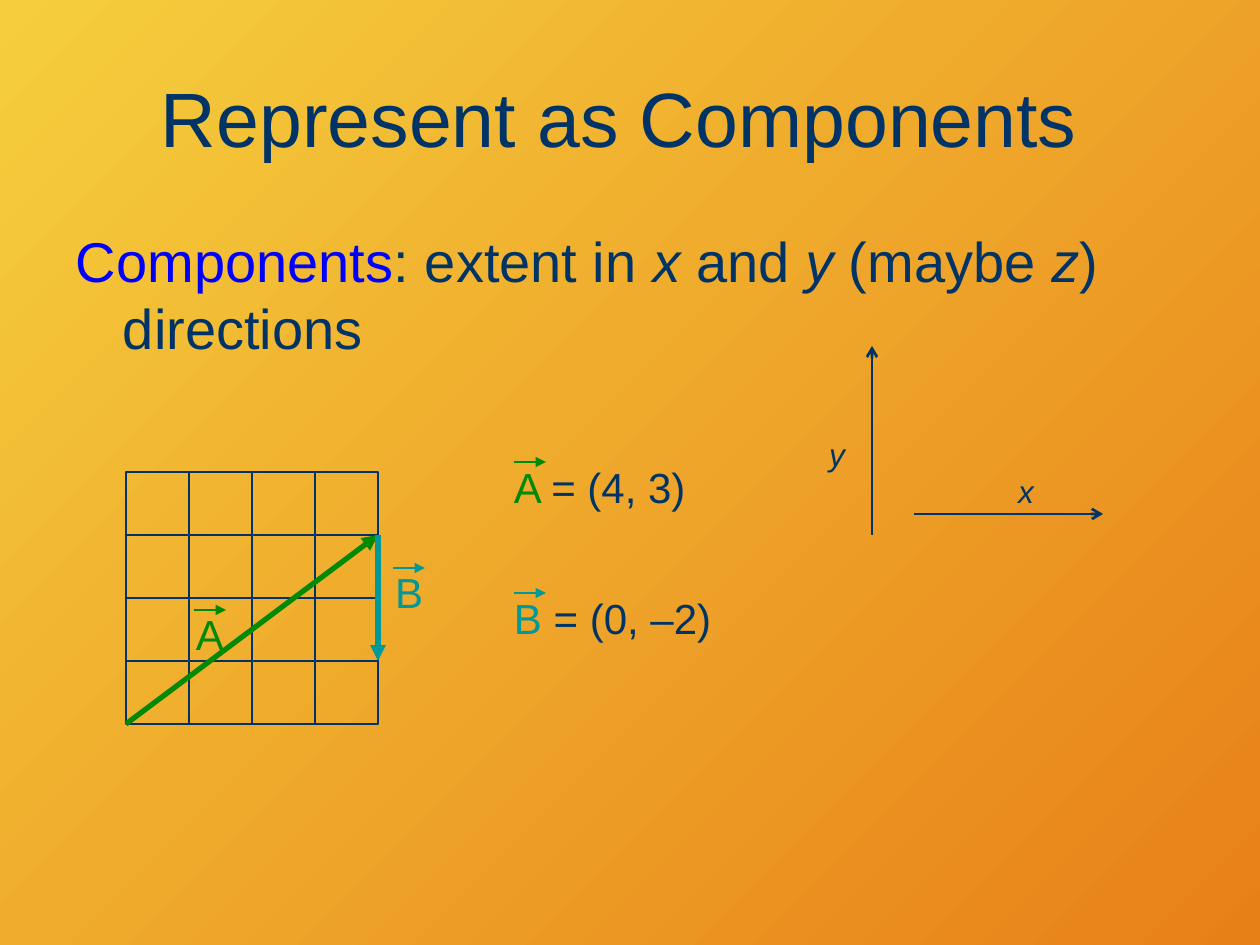
from lxml.etree import SubElement
from pptx import Presentation
from pptx.dml.color import RGBColor
from pptx.enum.shapes import MSO_CONNECTOR as Link, MSO_SHAPE as Shape
from pptx.enum.text import MSO_ANCHOR as Anchor, PP_ALIGN as Align
from pptx.oxml.ns import qn
from pptx.util import Emu, Pt

SCALE = 914400 / 126
HUE = {"navy": "003366", "blue": "0000FF", "green": "008901",
       "teal": "009999", "gold": "F5CE3D", "rust": "E88018"}

TITLE = [("Represent as Components ", "navy", False)]
BODY = [
    ("Components", "blue", False), (": extent in ", "navy", False),
    ("x", "navy", True), (" and ", "navy", False), ("y ", "navy", True),
    ("(maybe", "navy", False), (" z", "navy", True),
    (") directions", "navy", False),
]
GRID = {"left": 126, "top": 472, "cell": 63, "count": 4}
PATHS = [((0, 4), (4, 1), "green"), ((4, 1), (4, 3), "teal")]
TAGS = [("B", "teal", 388, 567), ("A", "green", 189, 609)]
SUMS = [("A ", "= (4, 3)", "green", 462), ("B ", "= (0, –2)", "teal", 593)]
AXES = [
    ("x", (1018, 472), (914, 514), (1103, 514)),
    ("y", (829, 435), (872, 535), (872, 346)),
]


def px(num):
    return Emu(round(num * SCALE))


def tint(name):
    return RGBColor.from_string(HUE[name])


def write(runs, box, size, align=Align.LEFT, anchor=Anchor.TOP, pad=(0, 0), hang=0):
    frame = slide.shapes.add_textbox(*map(px, box)).text_frame
    frame.word_wrap = True
    frame.vertical_anchor = anchor
    frame.margin_left = frame.margin_right = px(pad[0])
    frame.margin_top = frame.margin_bottom = px(pad[1])
    para = frame.paragraphs[0]
    para.alignment = align
    if hang:
        props = para._p.get_or_add_pPr()
        props.set("marL", str(px(hang)))
        props.set("indent", str(px(-hang)))
    for text, hue, slant in runs:
        run = para.add_run()
        run.text = text
        run.font.name = "Arial"
        run.font.size = Pt(size)
        run.font.italic = slant
        run.font.color.rgb = tint(hue)


def arrow(start, end, hue, width, head="triangle"):
    link = slide.shapes.add_connector(Link.STRAIGHT, *map(px, (*start, *end)))
    link.line.color.rgb = tint(hue)
    link.line.width = Pt(width)
    SubElement(link.line._get_or_add_ln(), qn("a:tailEnd"), type=head)
    SubElement(link._element.spPr, qn("a:effectLst"))


def node(col, row):
    return GRID["left"] + col * GRID["cell"], GRID["top"] + row * GRID["cell"]


deck = Presentation()
deck.slide_width, deck.slide_height = px(1260), px(945)
slide = deck.slides.add_slide(deck.slide_layouts[6])

fill = slide.background.fill
fill.gradient()
fill.gradient_angle = 315
for stop, hue, spot in zip(fill.gradient_stops, ("gold", "rust"), (0, 1)):
    stop.color.rgb = tint(hue)
    stop.position = spot

write(TITLE, (63, 38, 1134, 157), 44, Align.CENTER, Anchor.MIDDLE, (13, 6))
write(BODY, (63, 220, 1134, 158), 32, pad=(13, 6), hang=47)

for row in range(GRID["count"]):
    for col in range(GRID["count"]):
        cell = slide.shapes.add_shape(
            Shape.RECTANGLE, *map(px, (*node(col, row), GRID["cell"], GRID["cell"])))
        cell.fill.background()
        cell.line.color.rgb = tint("navy")
        cell.line.width = Pt(0.75)
        cell.shadow.inherit = False

for start, end, hue in PATHS:
    arrow(node(*start), node(*end), hue, 3)

for text, hue, left, top in TAGS:
    write([(text, hue, False)], (left, top, 42, 50), 24, Align.CENTER)
    arrow((left + 5, top + 1), (left + 37, top + 1), hue, 0.75)

for name, value, hue, top in SUMS:
    write([(name, hue, False), (value, "navy", False)], (514, top, 199, 50), 24)
    arrow((514, top), (546, top), hue, 0.75)

for text, spot, start, end in AXES:
    arrow(start, end, "navy", 1.5, "arrow")
    write([(text, "navy", True)], (*spot, 34, 38), 18)

deck.save("out.pptx")
